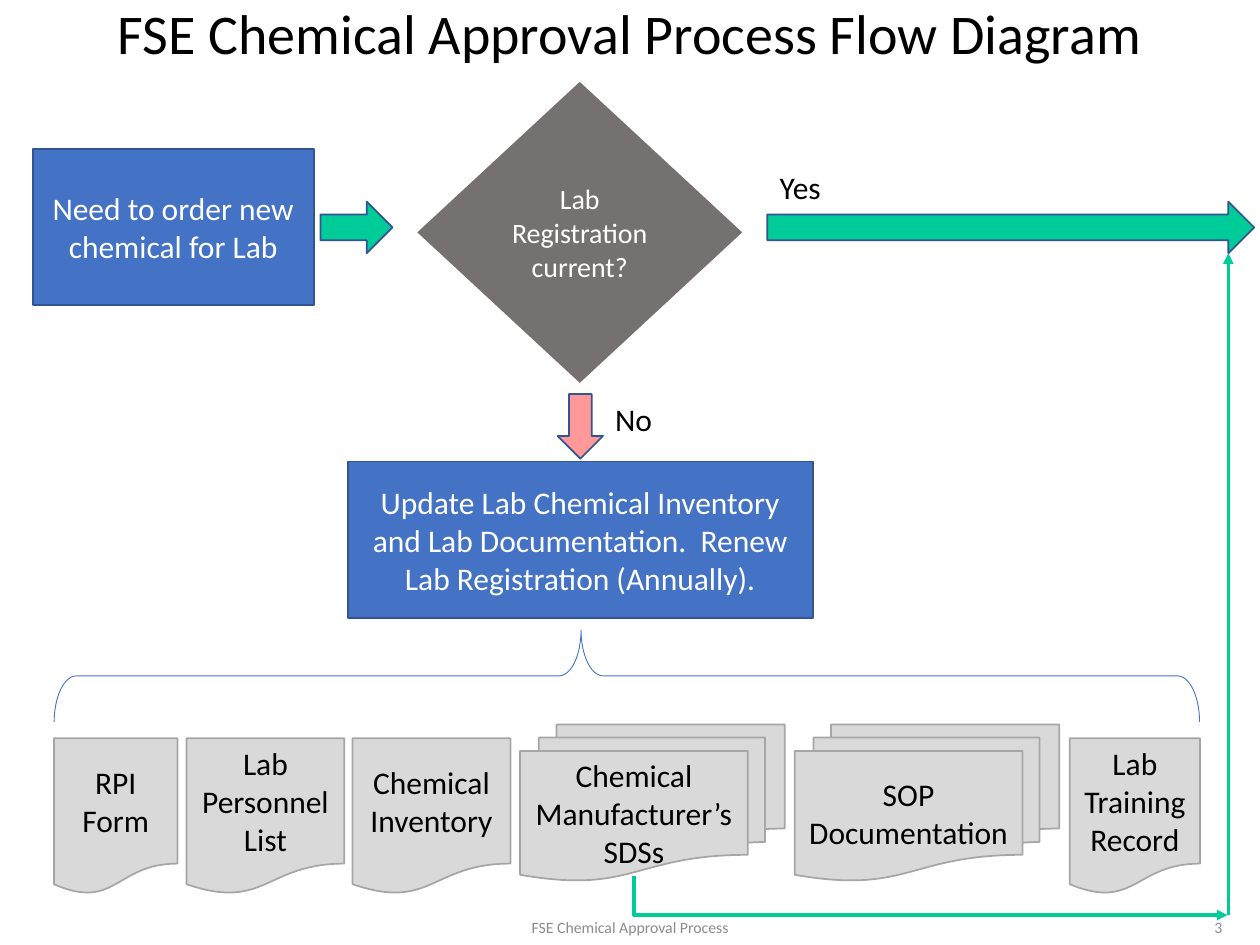
from dataclasses import dataclass

from lxml import etree
from pptx import Presentation
from pptx.dml.color import RGBColor
from pptx.enum.shapes import MSO_CONNECTOR, MSO_SHAPE
from pptx.enum.text import MSO_ANCHOR, PP_ALIGN
from pptx.oxml.ns import qn
from pptx.util import Pt

RECT = MSO_SHAPE.RECTANGLE
DECISION = MSO_SHAPE.FLOWCHART_DECISION
RIGHT_ARROW = MSO_SHAPE.RIGHT_ARROW
DOWN_ARROW = MSO_SHAPE.DOWN_ARROW
DOCUMENT = MSO_SHAPE.FLOWCHART_DOCUMENT
MULTI_DOCUMENT = MSO_SHAPE.FLOWCHART_MULTIDOCUMENT
BRACE = MSO_SHAPE.LEFT_BRACE
STRAIGHT = MSO_CONNECTOR.STRAIGHT
ELBOW = MSO_CONNECTOR.ELBOW
LEFT, CENTER, RIGHT = PP_ALIGN.LEFT, PP_ALIGN.CENTER, PP_ALIGN.RIGHT
TOP, MIDDLE = MSO_ANCHOR.TOP, MSO_ANCHOR.MIDDLE


@dataclass(frozen=True)
class Theme:
    font: str = "Calibri"
    black: str = "000000"
    white: str = "FFFFFF"
    blue: str = "4472C4"
    outline: str = "325491"
    green: str = "00CC99"
    pink: str = "FF9999"
    dark: str = "767171"
    paper: str = "D9D9D9"
    paper_edge: str = "A6A6A6"
    muted: str = "8C8C8C"
    title: float = 32
    body: float = 18
    decision: float = 16
    footer: float = 9


T = Theme()


@dataclass(frozen=True)
class Node:
    kind: MSO_SHAPE
    x: float
    y: float
    w: float
    h: float
    fill: str | None
    line: str | None
    text: str = ""
    color: str = T.white
    size: float = T.body
    weight: float = 1


@dataclass(frozen=True)
class Label:
    text: str
    x: float
    y: float
    w: float
    h: float
    size: float = T.body
    color: str = T.black
    align: PP_ALIGN = LEFT
    anchor: MSO_ANCHOR = TOP
    wrap: bool = True


BOX_H = 89.3
ARROW_Y, ARROW_H = 115.2, 29.5
DOC_Y, STACK_Y = 421.9, 414

STEPS = [
    Node(RECT, 18.7, 85, 160.6, BOX_H, T.blue, T.outline, "Need to order new chemical for Lab"),
    Node(RIGHT_ARROW, 183.1, ARROW_Y, 41.2, ARROW_H, T.green, T.outline),
    Node(DECISION, 238.5, 46.8, 185.6, 172, T.dark, None,
         "Lab Registration current?", size=T.decision),
    Node(RIGHT_ARROW, 438.5, ARROW_Y, 278.2, ARROW_H, T.green, T.outline),
    Node(DOWN_ARROW, 318.7, 225.2, 25.9, 36.9, T.pink, T.outline),
    Node(RECT, 198.7, 263.8, 265.7, BOX_H, T.blue, T.outline,
         "Update Lab Chemical Inventory and Lab Documentation.  "
         "Renew Lab Registration (Annually)."),
]

DOCUMENTS = [
    (DOCUMENT, 30.8, 70.6, "RPI Form"),
    (DOCUMENT, 106.6, 90.2, "Lab Personnel List"),
    (DOCUMENT, 201.5, 90.2, "Chemical Inventory"),
    (MULTI_DOCUMENT, 297.2, 151.2, "Chemical Manufacturer’s SDSs"),
    (MULTI_DOCUMENT, 454.1, 151.2, "SOP Documentation"),
    (DOCUMENT, 611.3, 74.5, "Lab Training Record"),
]

LABELS = [
    Label("FSE Chemical Approval Process Flow Diagram", 49.7, 0, 620.6, 76.3,
          T.title, align=CENTER),
    Label("Yes", 438.5, 92.2, 38.2, 29.1, wrap=False),
    Label("No", 344.4, 225.2, 36, 29.1, wrap=False),
    Label("FSE Chemical Approval Process", 238.3, 519.8, 243.4, 20.2,
          T.footer, T.muted, CENTER, MIDDLE),
    Label("3", 543.6, 519.8, 162, 20.2, T.footer, T.muted, RIGHT, MIDDLE),
]


def rgb(value: str) -> RGBColor:
    return RGBColor.from_string(value)


def write(tf, text: str, size: float, color: str, align: PP_ALIGN, anchor: MSO_ANCHOR):
    tf.vertical_anchor = anchor
    p = tf.paragraphs[0]
    p.alignment = align
    r = p.add_run()
    r.text = text
    r.font.name = T.font
    r.font.size = Pt(size)
    r.font.color.rgb = rgb(color)
    return p


def draw_node(slide, n: Node):
    s = slide.shapes.add_shape(n.kind, Pt(n.x), Pt(n.y), Pt(n.w), Pt(n.h))
    s.shadow.inherit = False
    if n.fill:
        s.fill.solid()
        s.fill.fore_color.rgb = rgb(n.fill)
    else:
        s.fill.background()
    if n.line:
        s.line.color.rgb = rgb(n.line)
        s.line.width = Pt(n.weight)
    else:
        s.line.fill.background()
    if n.text:
        s.text_frame.word_wrap = True
        write(s.text_frame, n.text, n.size, n.color, CENTER, MIDDLE)
    return s


def draw_label(slide, l: Label) -> None:
    s = slide.shapes.add_textbox(Pt(l.x), Pt(l.y), Pt(l.w), Pt(l.h))
    s.text_frame.word_wrap = l.wrap
    p = write(s.text_frame, l.text, l.size, l.color, l.align, l.anchor)
    if l.size == T.title:
        p.line_spacing = 0.9


def draw_connector(slide, kind: MSO_CONNECTOR, x1: float, y1: float, x2: float, y2: float):
    s = slide.shapes.add_connector(kind, Pt(x1), Pt(y1), Pt(x2), Pt(y2))
    s.line.color.rgb = rgb(T.green)
    s.line.width = Pt(2)
    etree.SubElement(s.line._get_or_add_ln(), qn("a:tailEnd"), type="triangle")
    etree.SubElement(s._element.spPr, qn("a:effectLst"))
    return s


def draw_corner(slide, x1: float, y1: float, x2: float, y2: float) -> None:
    cx, cy = (x1 + x2) / 2, (y1 + y2) / 2
    half_w, half_h = (y2 - y1) / 2, (x2 - x1) / 2
    s = draw_connector(slide, ELBOW, cx + half_w, cy - half_h, cx - half_w, cy + half_h)
    s._element.spPr.find(qn("a:prstGeom")).set("prst", "bentConnector2")
    s._element.spPr.find(qn("a:xfrm")).set("rot", str(270 * 60000))


def main() -> None:
    prs = Presentation()
    prs.slide_width, prs.slide_height = Pt(720), Pt(540)
    slide = prs.slides.add_slide(prs.slide_layouts[6])
    for step in STEPS:
        draw_node(slide, step)
    for kind, x, w, text in DOCUMENTS:
        y = DOC_Y if kind == DOCUMENT else STACK_Y
        draw_node(slide, Node(kind, x, y, w, BOX_H, T.paper, T.paper_edge, text, T.black))
    brace = draw_node(slide, Node(BRACE, 331.9, 59, 52.6, 654.5, None, T.blue, weight=0.5))
    brace.rotation = 90
    brace.adjustments[0] = 0.24
    brace.adjustments[1] = 0.54
    draw_corner(slide, 362.2, 500.4, 701.5, 522.9)
    draw_connector(slide, STRAIGHT, 701.9, 522.9, 701.9, 144.7)
    for label in LABELS:
        draw_label(slide, label)
    prs.save("out.pptx")


if __name__ == "__main__":
    main()
